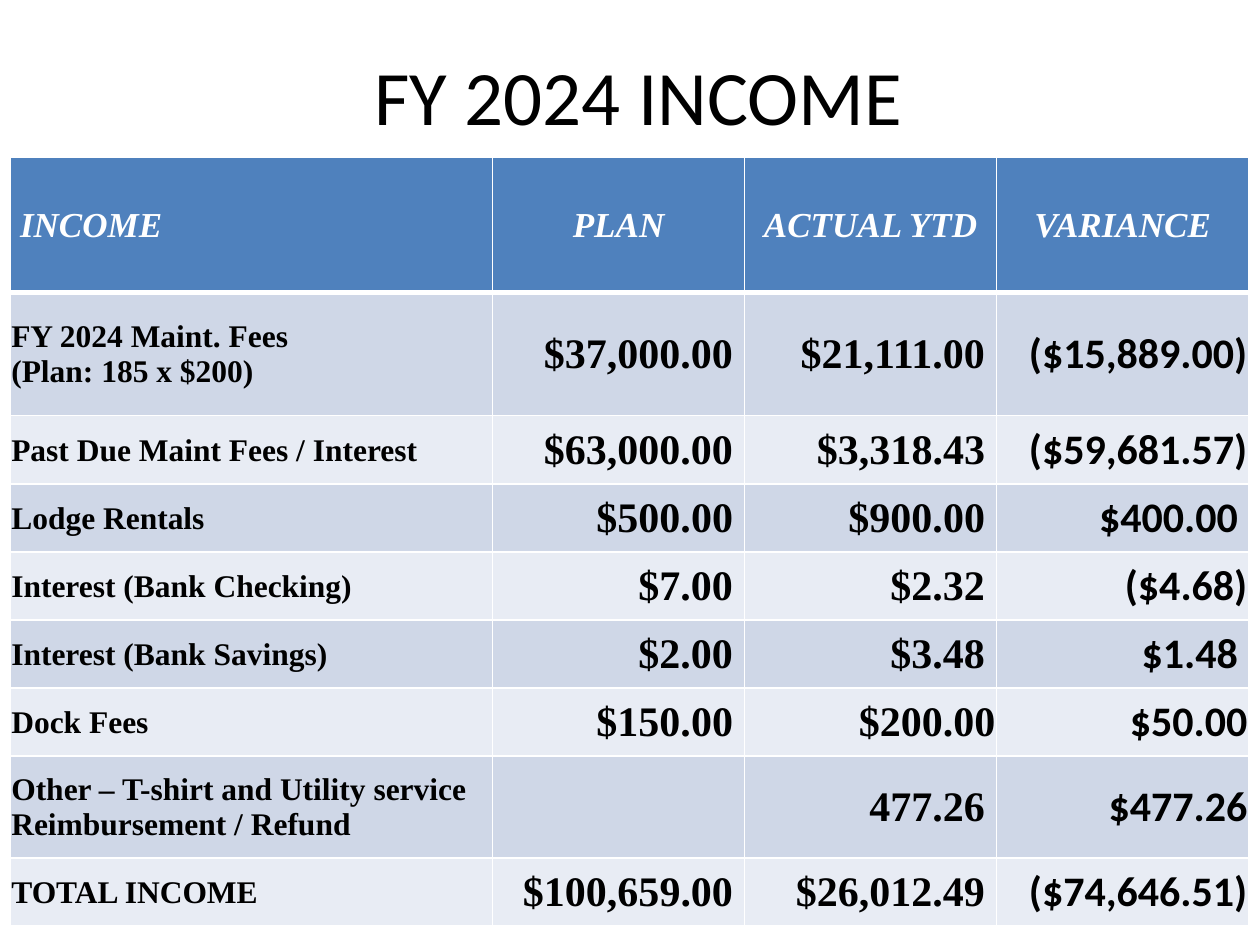
from typing import NamedTuple

from pptx import Presentation
from pptx.dml.color import RGBColor
from pptx.enum.text import MSO_ANCHOR as Anchor, PP_ALIGN as Align
from pptx.oxml.ns import qn
from pptx.util import Inches, Pt
from lxml.etree import SubElement

COLORS = {
    "white": "FFFFFF",
    "black": "000000",
    "header": "4F81BD",
    "odd": "CFD7E7",
    "even": "E8ECF4",
}
SERIF, SANS = "Times New Roman", "Calibri"
SLIDE_W, SLIDE_H = 10, 7.5
COLUMN_WIDTHS = [3.83, 2, 2, 2]
LINE_ROW = 0.54
CELL_FORMAT = {
    "vertical_anchor": Anchor.MIDDLE,
    "margin_left": Inches(0.01),
    "margin_right": Inches(0.01),
    "margin_top": Inches(0.01),
    "margin_bottom": 0,
}


class TextStyle(NamedTuple):
    size: float
    name: str = SERIF
    color: str = "black"
    bold: bool = True
    italic: bool = False
    align: Align = Align.LEFT


class IncomeLine(NamedTuple):
    source: str
    plan: str
    actual: str
    variance: str
    height: float = LINE_ROW


TITLE = TextStyle(44, SANS, bold=False, align=Align.CENTER)
HEADING = TextStyle(20, color="white", italic=True, align=Align.CENTER)
SOURCE = TextStyle(18)
AMOUNT = TextStyle(24, align=Align.RIGHT)
HEADER_STYLES = [HEADING._replace(align=Align.LEFT)] + [HEADING] * 3
LINE_STYLES = [SOURCE, AMOUNT, AMOUNT, AMOUNT._replace(name=SANS)]

# A single trailing space keeps positive amounts clear of the closing bracket
INCOME = [
    IncomeLine(" INCOME", "PLAN", "ACTUAL YTD", "VARIANCE", 1.07),
    IncomeLine("FY 2024 Maint. Fees\n(Plan: 185 x $200)",
               "$37,000.00 ", "$21,111.00 ", "($15,889.00)", 0.98),
    IncomeLine("Past Due Maint Fees / Interest",
               "$63,000.00 ", "$3,318.43 ", "($59,681.57)"),
    IncomeLine("Lodge Rentals", "$500.00 ", "$900.00 ", "$400.00 "),
    IncomeLine("Interest (Bank Checking)", "$7.00 ", "$2.32 ", "($4.68)"),
    IncomeLine("Interest (Bank Savings)", "$2.00 ", "$3.48 ", "$1.48 "),
    IncomeLine("Dock Fees", "$150.00 ", "$200.00", "$50.00"),
    IncomeLine("Other – T-shirt and Utility service Reimbursement / Refund",
               "", "477.26 ", "$477.26", 0.81),
    IncomeLine("TOTAL INCOME", "$100,659.00 ", "$26,012.49 ", "($74,646.51)"),
]


def rgb(color: str) -> RGBColor:
    return RGBColor.from_string(COLORS[color])


def write(frame, text: str, style: TextStyle) -> None:
    """Fill a text frame, one paragraph per line of text."""
    frame.text = text
    font_format = {"size": Pt(style.size), "name": style.name,
                   "bold": style.bold, "italic": style.italic}
    for paragraph in frame.paragraphs:
        paragraph.alignment = style.align
        for target in (paragraph, *paragraph.runs):
            for key, value in font_format.items():
                setattr(target.font, key, value)
            target.font.color.rgb = rgb(style.color)


def add_borders(cell, widths: dict[str, float]) -> None:
    properties = cell._tc.get_or_add_tcPr()
    for side, width in widths.items():
        line = SubElement(properties, qn(f"a:ln{side}"), w=str(Pt(width)))
        fill = SubElement(line, qn("a:solidFill"))
        SubElement(fill, qn("a:srgbClr"), val=COLORS["white"])


def format_cell(cell, fill: str, row: int) -> None:
    for key, value in CELL_FORMAT.items():
        setattr(cell, key, value)
    # The rule under the header is heavier than the others
    add_borders(cell, {"L": 1, "R": 1, "T": 3 if row == 1 else 1,
                       "B": 3 if row == 0 else 1})
    cell.fill.solid()
    cell.fill.fore_color.rgb = rgb(fill)


def add_income_table(slide, left: float, top: float) -> None:
    height = sum(line.height for line in INCOME)
    table = slide.shapes.add_table(
        len(INCOME), len(COLUMN_WIDTHS), Inches(left), Inches(top),
        Inches(sum(COLUMN_WIDTHS)), Inches(height)).table
    for column, width in zip(table.columns, COLUMN_WIDTHS):
        column.width = Inches(width)
    for row, line in enumerate(INCOME):
        table.rows[row].height = Inches(line.height)
        fill = "header" if row == 0 else "odd" if row % 2 else "even"
        styles = LINE_STYLES if row else HEADER_STYLES
        for column, (text, style) in enumerate(zip(line, styles)):
            cell = table.cell(row, column)
            format_cell(cell, fill, row)
            write(cell.text_frame, text, style)


def main() -> None:
    deck = Presentation()
    deck.slide_width, deck.slide_height = Inches(SLIDE_W), Inches(SLIDE_H)
    slide = deck.slides.add_slide(deck.slide_layouts[5])

    # Title
    title = slide.shapes.title
    title_box = {"left": 0.05 * SLIDE_W, "top": 0.04 * SLIDE_H,
                 "width": 0.9 * SLIDE_W, "height": 0.12 * SLIDE_H}
    for key, value in title_box.items():
        setattr(title, key, Inches(value))
    title.text_frame.vertical_anchor = Anchor.MIDDLE
    write(title.text_frame, " FY 2024 INCOME", TITLE)

    # Income against plan
    add_income_table(slide, left=0.08, top=SLIDE_H / 6)

    deck.save("out.pptx")


if __name__ == "__main__":
    main()
